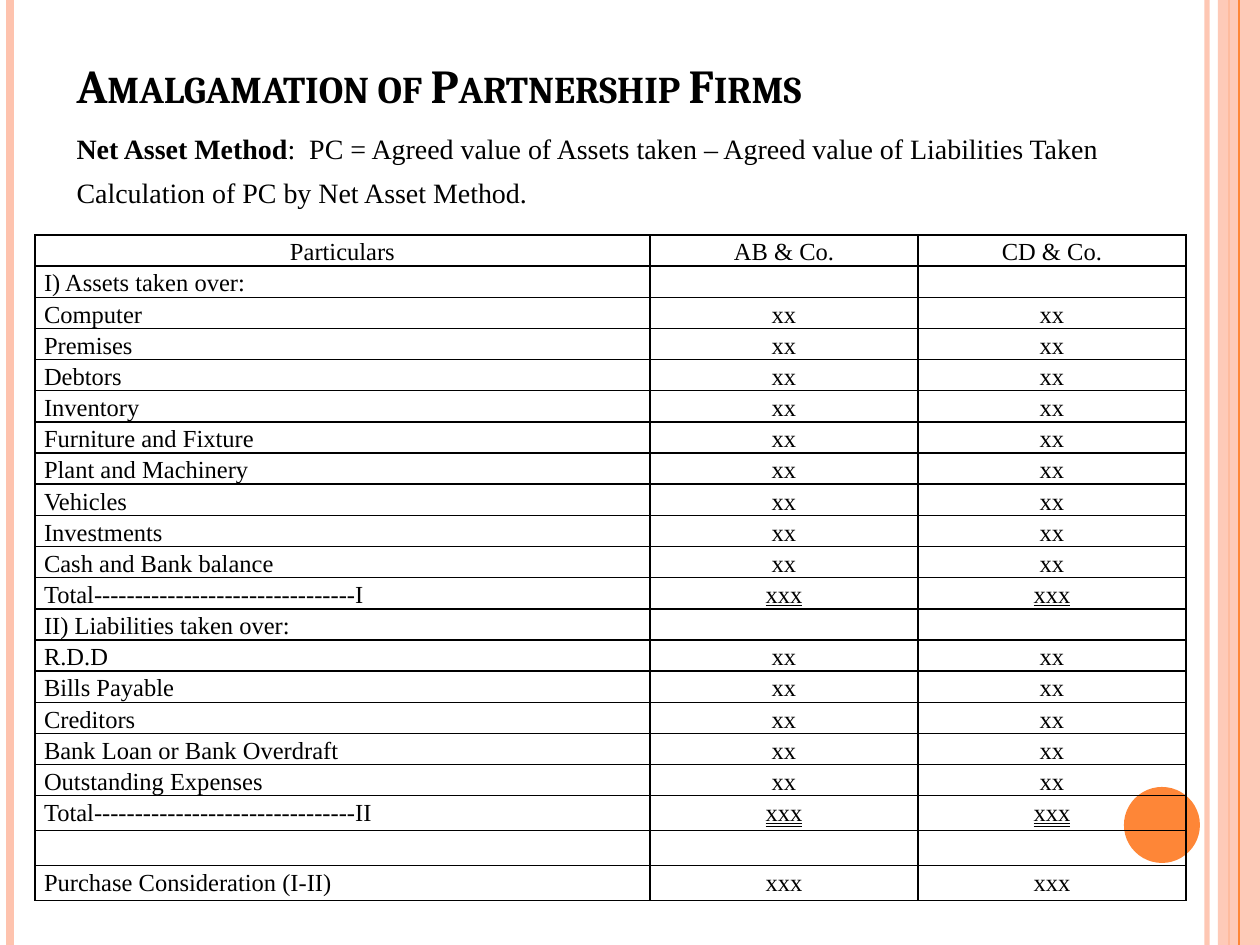
from dataclasses import dataclass

from lxml import etree
from pptx import Presentation
from pptx.dml.color import RGBColor
from pptx.enum.shapes import MSO_CONNECTOR, MSO_SHAPE
from pptx.enum.text import MSO_ANCHOR, MSO_AUTO_SIZE, MSO_UNDERLINE, PP_ALIGN
from pptx.oxml.ns import qn
from pptx.util import Emu, Pt

STRAIGHT = MSO_CONNECTOR.STRAIGHT
RECT, OVAL = MSO_SHAPE.RECTANGLE, MSO_SHAPE.OVAL
CENTER, JUSTIFY, LEFT = PP_ALIGN.CENTER, PP_ALIGN.JUSTIFY, PP_ALIGN.LEFT
TOP, BOTTOM = MSO_ANCHOR.TOP, MSO_ANCHOR.BOTTOM
DOUBLE = MSO_UNDERLINE.DOUBLE_LINE
NO_FIT = MSO_AUTO_SIZE.NONE


@dataclass(frozen=True)
class Theme:
    ink: str = "000000"
    peach: str = "FEC3AE"
    orange: str = "FE8637"
    head: str = "Cambria"
    text: str = "Times New Roman"
    title: int = 27
    body: int = 16
    cell: int = 14


THEME = Theme()
WIDTH, HEIGHT = 1260, 945

ASSETS = ["Computer", "Premises", "Debtors", "Inventory", "Furniture and Fixture",
          "Plant and Machinery", "Vehicles", "Investments", "Cash and Bank balance"]
DEBTS = ["R.D.D", "Bills Payable", "Creditors", "Bank Loan or Bank Overdraft",
         "Outstanding Expenses"]
DASHES = "-" * 32
ROWS = [
    ("Particulars", "AB & Co.", "CD & Co."),
    ("I) Assets taken over:", "", ""),
    *[(name, "xx", "xx") for name in ASSETS],
    (f"Total{DASHES}I", "xxx", "xxx"),
    ("II) Liabilities taken over:", "", ""),
    *[(name, "xx", "xx") for name in DEBTS],
    (f"Total{DASHES}II", "xxx", "xxx"),
    ("", "", ""),
    ("Purchase Consideration (I-II)", "xxx", "xxx"),
]
TALL = 3  # closing rows that are higher than the rest


def px(count):
    return Emu(round(count * 914400 / 126))


def place(shape, box):
    shape.left, shape.top, shape.width, shape.height = map(px, box)


def style(font, face, size, bold=False):
    font.name, font.size, font.bold = face, Pt(size), bold
    font.color.rgb = RGBColor.from_string(THEME.ink)


def fade(fill, percent):
    color = fill.find(".//" + qn("a:srgbClr"))
    etree.SubElement(color, qn("a:alpha"), val=str(percent * 1000))


def add_rule(slide, x, color, width, alpha=100):
    """Draw an upright line over the full slide height."""
    rule = slide.shapes.add_connector(STRAIGHT, px(x), 0, px(x), px(HEIGHT))
    rule.line.color.rgb = RGBColor.from_string(color)
    rule.line.width = Pt(width)
    props = rule._element.spPr
    etree.SubElement(props, qn("a:effectLst"))
    if alpha < 100:
        fade(props, alpha)


def add_plain(slide, kind, box, color, alpha=100):
    shape = slide.shapes.add_shape(kind, *map(px, box))
    shape.shadow.inherit = False
    shape.fill.solid()
    shape.fill.fore_color.rgb = RGBColor.from_string(color)
    shape.line.fill.background()
    if alpha < 100:
        fade(shape._element.spPr, alpha)


def add_trim(slide):
    """Draw the side bands and the disc behind the content."""
    add_rule(slide, 1207, THEME.peach, 3, 93)
    add_rule(slide, 10, THEME.peach, 4.5)
    add_rule(slide, 1229, THEME.orange, 1.5)
    add_plain(slide, RECT, (1218, 0, WIDTH - 1218, HEIGHT), THEME.peach, 87)
    add_rule(slide, 1239, THEME.orange, 0.75)
    add_plain(slide, OVAL, (1124, 787, 76, 76), THEME.orange)


def fill_title(title, box):
    place(title, box)
    frame = title.text_frame
    frame.auto_size, frame.vertical_anchor = NO_FIT, BOTTOM
    frame.margin_bottom = px(61)
    para = frame.paragraphs[0]
    para.alignment = LEFT
    run = para.add_run()
    run.text = "Amalgamation of Partnership Firms"
    style(para.font, THEME.head, THEME.title, True)
    run._r.get_or_add_rPr().set("cap", "small")


def fill_body(body, box):
    place(body, box)
    frame = body.text_frame
    frame.auto_size, frame.vertical_anchor = NO_FIT, TOP
    lines = [
        [("Net Asset Method", True),
         (":  PC = Agreed value of Assets taken – Agreed value of Liabilities Taken", False)],
        [("Calculation of PC by Net Asset Method.", False)],
    ]
    for i, parts in enumerate(lines):
        para = frame.add_paragraph() if i else frame.paragraphs[0]
        para.space_before = Pt(6)
        props = para._p.get_or_add_pPr()
        props.set("marL", "0")
        props.set("indent", "0")
        etree.SubElement(props, qn("a:buNone"))
        style(para.font, THEME.text, THEME.body)
        for text, bold in parts:
            run = para.add_run()
            run.text, run.font.bold = text, bold


def add_edges(cell):
    props = cell._tc.get_or_add_tcPr()
    for i, side in enumerate(("lnL", "lnR", "lnT", "lnB")):
        edge = etree.Element(qn("a:" + side), w=str(Pt(1)))
        paint = etree.SubElement(edge, qn("a:solidFill"))
        etree.SubElement(paint, qn("a:srgbClr"), val=THEME.ink)
        props.insert(i, edge)


def fill_cell(cell, text, align, under):
    cell.fill.background()
    add_edges(cell)
    cell.margin_left = cell.margin_right = px(9)
    cell.margin_top = cell.margin_bottom = 0
    para = cell.text_frame.paragraphs[0]
    para.alignment = align
    style(para.font, THEME.text, THEME.cell)
    if text:
        para.line_spacing = 1.15
        run = para.add_run()
        run.text = text
        if under:
            run.font.underline = DOUBLE
    else:
        etree.SubElement(para._p, qn("a:endParaRPr"), sz=str(THEME.cell * 100))


def add_ledger(slide, box):
    left, top, width, height = box
    table = slide.shapes.add_table(len(ROWS), 3, *map(px, box)).table
    table.first_row = table.horz_banding = False
    side = 268
    for col, size in zip(table.columns, (width - 2 * side, side, side)):
        col.width = px(size)
    high, short = 35, len(ROWS) - TALL
    low = (height - TALL * high) / short
    for r, texts in enumerate(ROWS):
        table.rows[r].height = px(low if r < short else high)
        for c, text in enumerate(texts):
            align = CENTER if c or r == 0 else JUSTIFY
            under = c > 0 and texts[0].startswith("Total")
            fill_cell(table.cell(r, c), text, align, under)


def main():
    deck = Presentation()
    deck.slide_width, deck.slide_height = px(WIDTH), px(HEIGHT)
    slide = deck.slides.add_slide(deck.slide_layouts[1])
    title, body = slide.placeholders
    add_trim(slide)
    for holder in (title, body):  # bring the text in front of the trim
        slide.shapes._spTree.append(holder._element)
    fill_title(title, (64, 16, 1029, 158))
    fill_body(body, (64, 125, 1123, 679))
    add_ledger(slide, (35, 235, 1151, 664))
    deck.save("out.pptx")


if __name__ == "__main__":
    main()
